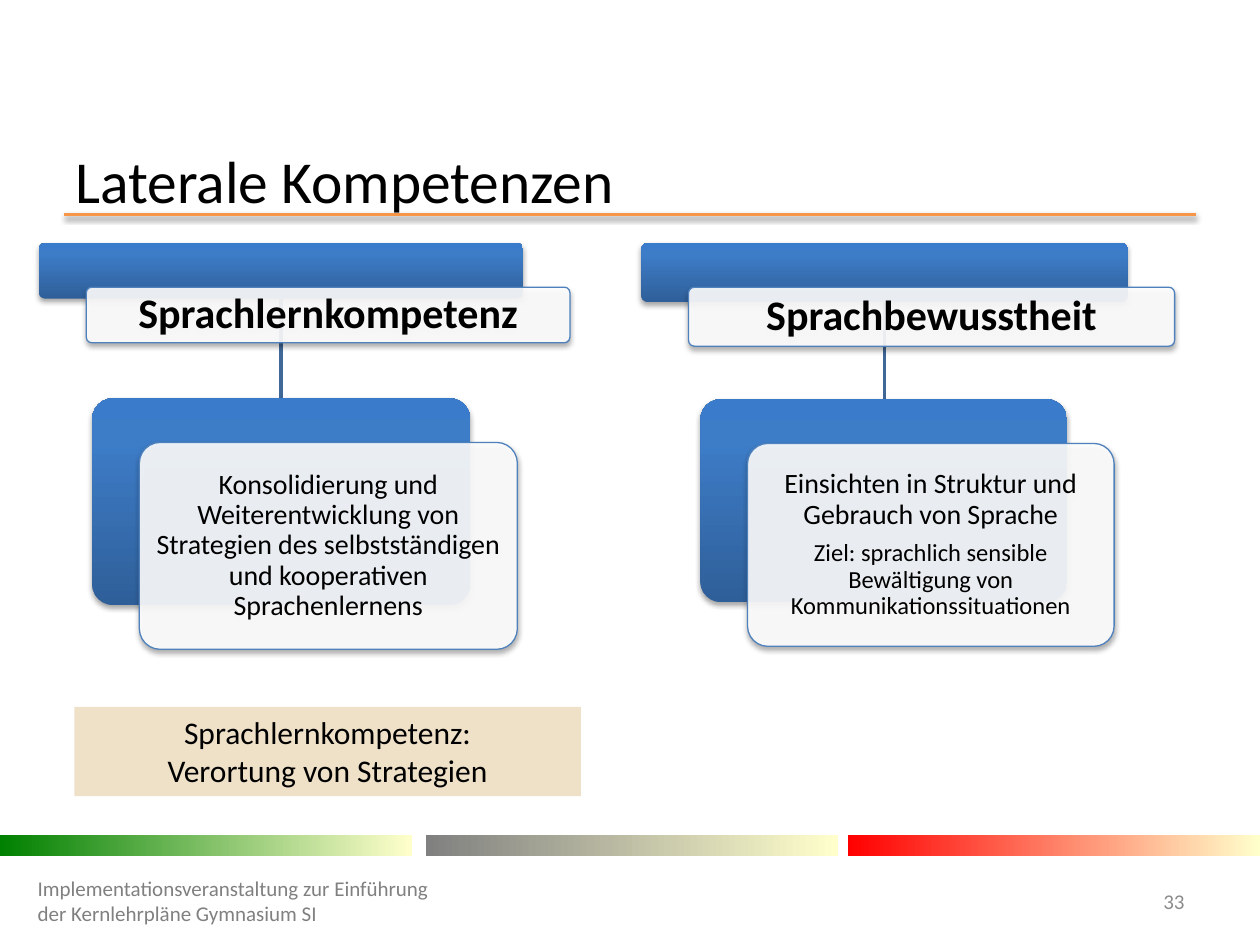
import dataclasses

import pptx
import pptx.dml.color
import pptx.enum.shapes
import pptx.enum.text
import pptx.oxml.ns
import pptx.util
from lxml import etree

Cm = pptx.util.Cm
Pt = pptx.util.Pt
Align = pptx.enum.text.PP_ALIGN
Anchor = pptx.enum.text.MSO_ANCHOR
Shape = pptx.enum.shapes.MSO_SHAPE
qn = pptx.oxml.ns.qn


@dataclasses.dataclass(frozen=True)
class Theme:
    font: str = "Calibri"
    text: str = "000000"
    footer: str = "808080"
    number: str = "8C8C8C"
    rule: str = "F79646"
    stem: str = "3F6797"
    outline: str = "4F81BD"
    panel: str = "FFFFFF"
    note: str = "EFE0C8"
    blue: tuple = ((0, "2F5F99"), (80, "3D7CC7"), (100, "3A7CCB"))
    bar_end: str = "FFFFCC"
    title_size: int = 34
    heading_size: int = 24
    note_size: int = 18
    body_size: int = 16
    detail_size: int = 14
    footer_size: int = 12


def rgb(color):
    return pptx.dml.color.RGBColor.from_string(color)


def add_text(frame, text, *, font, size, color, bold=False, align=Align.LEFT,
             line_spacing=None, space_after=None):
    """Fill the frame's empty first paragraph, or add a further one."""
    para = frame.paragraphs[0]
    if para.runs:
        para = frame.add_paragraph()
    para.alignment = align
    para.line_spacing = line_spacing
    para.space_after = space_after
    span = para.add_run()
    span.text = text
    span.font.name = font
    span.font.size = Pt(size)
    span.font.bold = bold
    span.font.color.rgb = rgb(color)


def add_shadow(element, opacity):
    """Put a soft downward shadow into the element's effect list."""
    effects = element.spPr.find(qn("a:effectLst"))
    shadow = etree.SubElement(effects, qn("a:outerShdw"), blurRad=str(Pt(3.1)),
                              dist=str(Pt(1.7)), dir="5400000", rotWithShape="0")
    color = etree.SubElement(shadow, qn("a:srgbClr"), val="000000")
    etree.SubElement(color, qn("a:alpha"), val=str(opacity * 1000))


class SlideBuilder:
    def __init__(self, slide, theme):
        self.slide = slide
        self.theme = theme

    def paragraph(self, frame, text, size, color=None, **options):
        add_text(frame, text, font=self.theme.font, size=size,
                 color=color or self.theme.text, **options)

    def title(self, text, left, top, width, height):
        box = self.slide.shapes.title
        box.left, box.top, box.width, box.height = map(Cm, (left, top, width, height))
        box.text_frame.auto_size = pptx.enum.text.MSO_AUTO_SIZE.NONE
        box.text_frame.vertical_anchor = Anchor.MIDDLE
        self.paragraph(box.text_frame, text, self.theme.title_size)

    def label(self, text, left, width, color, align=Align.LEFT):
        box = self.slide.shapes.add_textbox(Cm(left), Cm(17.65), Cm(width), Cm(1.02))
        frame = box.text_frame
        frame.word_wrap = True
        frame.vertical_anchor = Anchor.MIDDLE
        self.paragraph(frame, text, self.theme.footer_size, color, align=align)

    def line(self, start, end, color):
        line = self.slide.shapes.add_connector(
            pptx.enum.shapes.MSO_CONNECTOR.STRAIGHT, *map(Cm, start + end))
        line.line.color.rgb = rgb(color)
        line.line.width = Pt(2)
        etree.SubElement(line._element.spPr, qn("a:effectLst"))
        return line

    def block(self, kind, left, top, width, height):
        block = self.slide.shapes.add_shape(kind, *map(Cm, (left, top, width, height)))
        block.shadow.inherit = False
        block.line.fill.background()
        if kind == Shape.ROUNDED_RECTANGLE:
            block.adjustments[0] = 0.1
            add_shadow(block._element, 35)
        return block

    def gradient(self, block, stops, angle=0):
        block.fill.gradient()
        block.fill.gradient_angle = angle
        stop_list = block._element.spPr.find(qn("a:gradFill")).find(qn("a:gsLst"))
        for old_stop in list(stop_list):
            stop_list.remove(old_stop)
        for position, color in stops:
            stop = etree.SubElement(stop_list, qn("a:gs"), pos=str(position * 1000))
            etree.SubElement(stop, qn("a:srgbClr"), val=color)

    def layered_box(self, left, top, width, height, inset, paragraphs, bold=False):
        """Blue plate with a translucent white text panel set off over it."""
        plate = self.block(Shape.ROUNDED_RECTANGLE, left, top, width, height)
        self.gradient(plate, self.theme.blue, angle=90)
        panel = self.block(Shape.ROUNDED_RECTANGLE, left + 0.95, top + 0.89, width, height)
        panel.fill.solid()
        panel.fill.fore_color.rgb = rgb(self.theme.panel)
        color = panel._element.spPr.find(qn("a:solidFill")).find(qn("a:srgbClr"))
        etree.SubElement(color, qn("a:alpha"), val="90000")
        panel.line.color.rgb = rgb(self.theme.outline)
        panel.line.width = Pt(0.75)
        frame = panel.text_frame
        frame.word_wrap = True
        frame.vertical_anchor = Anchor.MIDDLE
        frame.margin_left = frame.margin_right = Cm(inset)
        frame.margin_top = frame.margin_bottom = Cm(inset)
        for text, size in paragraphs:
            self.paragraph(frame, text, size, bold=bold, align=Align.CENTER,
                           line_spacing=0.9, space_after=Pt(round(size * 0.4)))

    def competence(self, heading, heading_box, paragraphs, body_box):
        left, top, width, height = heading_box
        center = left + width / 2
        self.line((center, top + height), (center, body_box[1]), self.theme.stem)
        self.layered_box(*heading_box, 0.25, [(heading, self.theme.heading_size)], bold=True)
        self.layered_box(*body_box, 0.18, paragraphs)

    def note(self, lines, left, top, width, height):
        box = self.block(Shape.RECTANGLE, left, top, width, height)
        box.fill.solid()
        box.fill.fore_color.rgb = rgb(self.theme.note)
        box.text_frame.word_wrap = True
        box.text_frame.vertical_anchor = Anchor.TOP
        for text in lines:
            self.paragraph(box.text_frame, text, self.theme.note_size, align=Align.CENTER)


def main():
    deck = pptx.Presentation()
    deck.slide_width, deck.slide_height = Cm(25.4), Cm(19.05)
    theme = Theme()
    page = SlideBuilder(deck.slides.add_slide(deck.slide_layouts[5]), theme)

    rule = page.line((1.3, 4.32), (24.1, 4.32), theme.rule)
    add_shadow(rule._element, 38)
    for left, color in ((0, "008000"), (8.59, "808080"), (17.09, "FF0000")):
        bar = page.block(Shape.RECTANGLE, left, 16.84, 8.31, 0.41)
        page.gradient(bar, ((0, color), (100, theme.bar_end)))

    page.title("Laterale Kompetenzen", 1.27, 3.12, 22.86, 0.99)
    page.competence(
        "Sprachlernkompetenz", (0.79, 4.9, 9.75, 1.12),
        [("Konsolidierung und Weiterentwicklung von Strategien des "
          "selbstständigen und kooperativen Sprachenlernens", theme.body_size)],
        (1.86, 8.03, 7.62, 4.17))
    page.competence(
        "Sprachbewusstheit", (12.93, 4.9, 9.8, 1.19),
        [("Einsichten in Struktur und Gebrauch von Sprache", theme.body_size),
         ("Ziel: sprachlich sensible Bewältigung von Kommunikationssituationen",
          theme.detail_size)],
        (14.12, 8.05, 7.39, 4.09))
    page.note(("Sprachlernkompetenz:", "Verortung von Strategien"), 1.5, 14.25, 10.21, 1.8)
    page.label("Implementationsveranstaltung zur Einführung der Kernlehrpläne Gymnasium SI",
               0.51, 8.41, theme.footer)
    page.label("33", 22.5, 1.63, theme.number, align=Align.RIGHT)
    deck.save("out.pptx")


if __name__ == "__main__":
    main()
